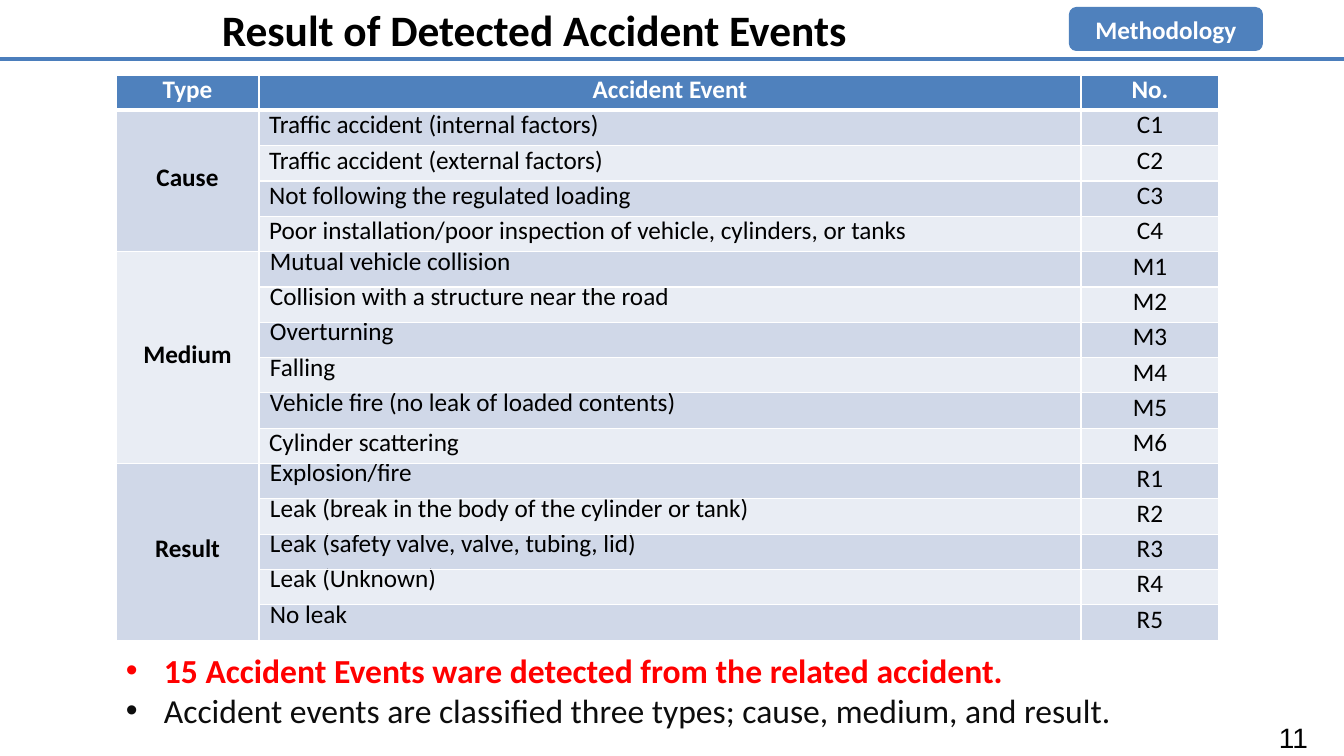
from pptx import Presentation
from pptx import util as u
from pptx.dml.color import RGBColor
from pptx.enum import shapes, text
from pptx.oxml.ns import qn
from lxml import etree

TITLE = "Result of Detected Accident Events"
TAG = "Methodology"
PAGE = "11"
HEADER = ("Type", "Accident Event", "No.")
SECTIONS = [
    ("Cause", [
        "Traffic accident (internal factors)",
        "Traffic accident (external factors)",
        "Not following the regulated loading",
        "Poor installation/poor inspection of vehicle, cylinders, or tanks",
    ]),
    ("Medium", [
        "Mutual vehicle collision",
        "Collision with a structure near the road",
        "Overturning",
        "Falling",
        "Vehicle fire (no leak of loaded contents)",
        "Cylinder scattering",
    ]),
    ("Result", [
        "Explosion/fire",
        "Leak (break in the body of the cylinder or tank)",
        "Leak (safety valve, valve, tubing, lid)",
        "Leak (Unknown)",
        "No leak",
    ]),
]
PADDED_EVENTS = SECTIONS[0][1] + ["Cylinder scattering"]
NOTES = [
    ("15 Accident Events ware detected from the related accident.", "red", True),
    ("Accident events are classified three types; cause, medium, and result.", "ink", False),
]
COLORS = {
    "white": "FFFFFF", "black": "000000", "ink": "0D0D0D", "red": "FF0000",
    "blue": "4F81BD", "rule": "4B7EBC", "dark": "D0D8E8", "light": "E9EDF4",
}
BANDS = ("dark", "light")
COLS = (143, 822, 138)
ROW_H = 35
LEFT, CENTER, RIGHT = text.PP_ALIGN.LEFT, text.PP_ALIGN.CENTER, text.PP_ALIGN.RIGHT
MIDDLE = text.MSO_ANCHOR.MIDDLE


def px(n):
    return u.Emu(round(n * 914400 / 100.8))


def rgb(name):
    return RGBColor.from_string(COLORS[name])


def add_run(p, words, size, color, bold=False, align=LEFT, font="Calibri"):
    p.alignment = align
    r = p.add_run()
    r.text = words
    r.font.size = u.Pt(size)
    r.font.name = font
    r.font.bold = bold
    r.font.color.rgb = rgb(color)


def add_text(slide, x, y, w, h):
    tf = slide.shapes.add_textbox(px(x), px(y), px(w), px(h)).text_frame
    tf.word_wrap = True
    return tf


def add_bullet(p):
    pPr = p._p.get_or_add_pPr()
    pPr.set("marL", str(px(38)))
    pPr.set("indent", str(px(-38)))
    etree.SubElement(pPr, qn("a:buFont")).set("typeface", "Arial")
    etree.SubElement(pPr, qn("a:buChar")).set("char", "•")


def set_borders(cell, top, bottom):
    tcPr = cell._tc.get_or_add_tcPr()
    for i, (side, width) in enumerate((("L", 1), ("R", 1), ("T", top), ("B", bottom))):
        ln = etree.Element(qn("a:ln" + side), w=str(u.Pt(width)))
        fill = etree.SubElement(ln, qn("a:solidFill"))
        etree.SubElement(fill, qn("a:srgbClr")).set("val", COLORS["white"])
        tcPr.insert(i, ln)


def fill_cell(cell, words, fill, color="black", bold=False, align=CENTER):
    cell.fill.solid()
    cell.fill.fore_color.rgb = rgb(fill)
    p = cell.text_frame.paragraphs[0]
    p.line_spacing = u.Pt(18)
    add_run(p, words, 18, color, bold, align)


def add_events(slide):
    rows = 1 + sum(len(events) for _, events in SECTIONS)
    frame = slide.shapes.add_table(rows, len(COLS), px(116), px(75), px(sum(COLS)), px(rows * ROW_H))
    table = frame.table
    for col, width in zip(table.columns, COLS):
        col.width = px(width)
    for row in table.rows:
        row.height = px(ROW_H)
    for c, words in enumerate(HEADER):
        fill_cell(table.cell(0, c), words, "blue", "white", True)
    r = 1
    for s, (kind, events) in enumerate(SECTIONS):
        group = table.cell(r, 0)
        group.merge(table.cell(r + len(events) - 1, 0))
        group.vertical_anchor = MIDDLE
        fill_cell(group, kind, BANDS[s % 2], bold=True)
        for n, event in enumerate(events, 1):
            band = BANDS[(r - 1) % 2]
            cell = table.cell(r, 1)
            fill_cell(cell, event, band, align=LEFT)
            if event not in PADDED_EVENTS:
                cell.margin_left = cell.margin_right = px(7)
                cell.margin_top = cell.margin_bottom = 0
                pPr = cell.text_frame.paragraphs[0]._p.get_or_add_pPr()
                pPr.set("marL", str(px(4)))
            fill_cell(table.cell(r, 2), f"{kind[0]}{n}", band)
            r += 1
    for r in range(rows):
        for c in range(len(COLS)):
            set_borders(table.cell(r, c), 3 if r == 1 else 1, 3 if r == 0 else 1)


def main():
    prs = Presentation()
    prs.slide_width, prs.slide_height = px(1344), px(756)
    slide = prs.slides.add_slide(prs.slide_layouts[6])

    tf = add_text(slide, 0, -2, 1068, 62)
    add_run(tf.paragraphs[0], TITLE, 31, "black", True, CENTER)

    tf = add_text(slide, 1083, 717, 235, 40)
    tf.vertical_anchor = MIDDLE
    add_run(tf.paragraphs[0], PAGE, 20, "black", align=RIGHT, font="Arial")

    tf = add_text(slide, 116, 645, 1119, 92)
    for i, (words, color, bold) in enumerate(NOTES):
        p = tf.add_paragraph() if i else tf.paragraphs[0]
        add_run(p, words, 24, color, bold)
        add_bullet(p)

    add_events(slide)

    line = slide.shapes.add_connector(shapes.MSO_CONNECTOR.STRAIGHT, 0, px(59), px(1344), px(59))
    line.line.color.rgb = rgb("rule")
    line.line.width = u.Pt(3.5)
    etree.SubElement(line._element.spPr, qn("a:effectLst"))

    sp = slide.shapes.add_shape(shapes.MSO_SHAPE.ROUNDED_RECTANGLE, px(1069), px(7), px(194), px(44))
    sp.shadow.inherit = False
    sp.fill.solid()
    sp.fill.fore_color.rgb = rgb("blue")
    sp.line.fill.background()
    sp.text_frame.vertical_anchor = MIDDLE
    add_run(sp.text_frame.paragraphs[0], TAG, 18, "white", True, CENTER)

    prs.save("out.pptx")


if __name__ == "__main__":
    main()
